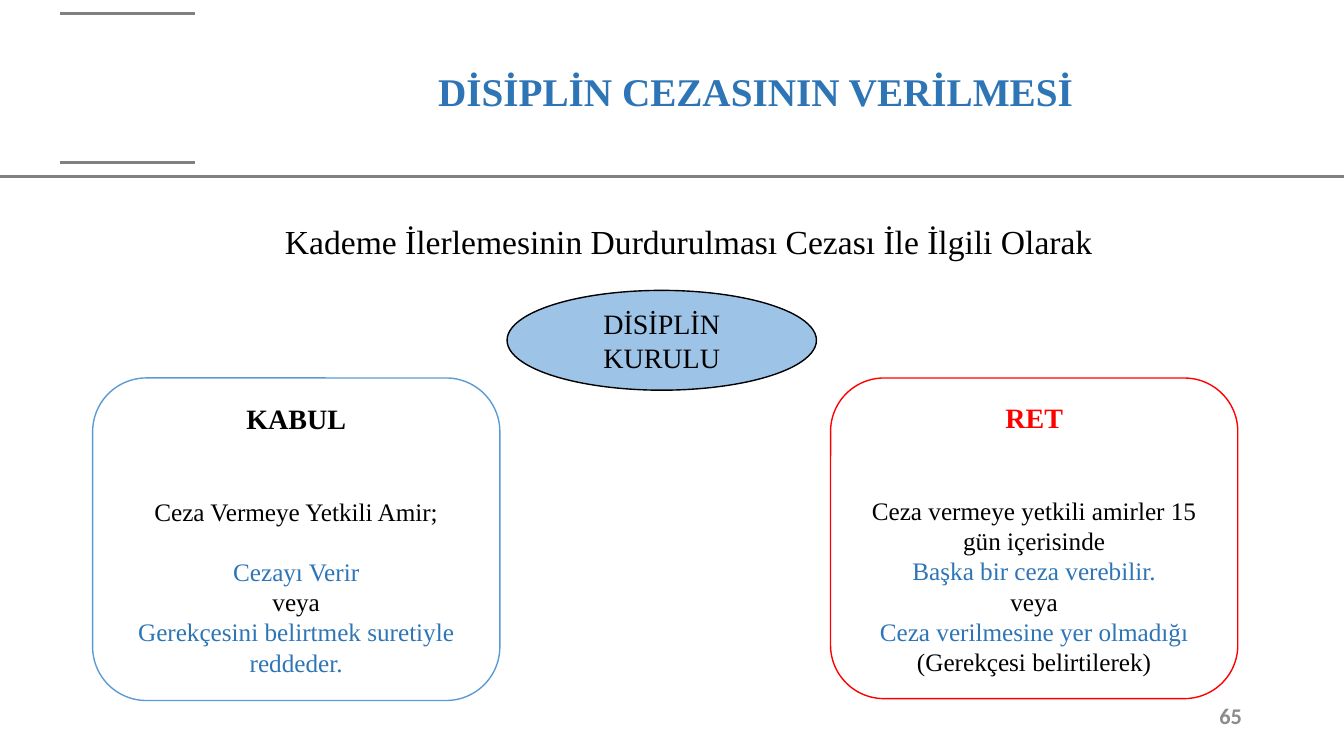
from pptx import Presentation
from pptx.dml.color import RGBColor
from pptx.enum.shapes import MSO_CONNECTOR, MSO_SHAPE
from pptx.enum.text import MSO_ANCHOR, MSO_AUTO_SIZE, PP_ALIGN
from pptx.util import Pt
from lxml.etree import SubElement
from pptx.oxml.ns import qn

BLACK = RGBColor(0, 0, 0)
WHITE = RGBColor(255, 255, 255)
RED = RGBColor(255, 0, 0)
GRAY = RGBColor(0x80, 0x80, 0x80)
PALE = RGBColor(0x8C, 0x8C, 0x8C)
BLUE = RGBColor(0x2E, 0x75, 0xB6)
SKY = RGBColor(0x5B, 0x9B, 0xD5)
LIGHT = RGBColor(0x9D, 0xC3, 0xE6)
SERIF = "Times New Roman"


def style(para, size, color, bold=False, name=SERIF, align=PP_ALIGN.CENTER):
    para.alignment = align
    font = para.font
    font.name, font.size, font.bold = name, Pt(size), bold
    font.color.rgb = color


def add_node(kind, left, top, width, height, fill, line):
    """Add a filled, outlined shape and return its text frame."""
    node = slide.shapes.add_shape(kind, Pt(left), Pt(top), Pt(width), Pt(height))
    node.shadow.inherit = False
    node.fill.solid()
    node.fill.fore_color.rgb = fill
    node.line.color.rgb = line
    node.line.width = Pt(1)
    frame = node.text_frame
    frame.word_wrap = True
    frame.vertical_anchor = MSO_ANCHOR.MIDDLE
    return frame


deck = Presentation()
deck.slide_width, deck.slide_height = Pt(960), Pt(540)
slide = deck.slides.add_slide(deck.slide_layouts[5])

# Header rules
for left, right, y in [(0, 960, 126), (43.2, 139, 9.4), (43.2, 139, 115.9)]:
    rule = slide.shapes.add_connector(
        MSO_CONNECTOR.STRAIGHT, Pt(left), Pt(y), Pt(right), Pt(y))
    rule.line.color.rgb = GRAY
    rule.line.width = Pt(2.25)
    SubElement(rule._element.spPr, qn("a:effectLst"))

# Title
title = slide.shapes.title
title.left, title.top, title.width, title.height = Pt(185), Pt(28.8), Pt(709.2), Pt(76.3)
title.text = "DİSİPLİN CEZASININ VERİLMESİ"
title.text_frame.auto_size = MSO_AUTO_SIZE.NONE
title.text_frame.vertical_anchor = MSO_ANCHOR.MIDDLE
style(title.text_frame.paragraphs[0], 28, BLUE, True)
title.text_frame.paragraphs[0].line_spacing = 0.9

# Subtitle
lead = slide.shapes.add_textbox(Pt(36.7), Pt(154.1), Pt(910.8), Pt(36)).text_frame
lead.word_wrap = True
lead.text = "Kademe İlerlemesinin Durdurulması Cezası İle İlgili Olarak"
style(lead.paragraphs[0], 24, BLACK)

# Outcome cards: each line is its space before and its coloured runs
cards = [
    (66.2, 230.4, SKY, "KABUL", BLACK, [
        (44, [("Ceza Vermeye Yetkili Amir;", BLACK)]),
        (21, [("Cezayı Verir", BLUE)]),
        (0, [("veya", BLACK)]),
        (0, [("Gerekçesini belirtmek suretiyle reddeder.", BLUE)]),
    ]),
    (593.3, 229, RED, "RET", RED, [
        (44, [("Ceza vermeye yetkili amirler 15 gün içerisinde", BLACK)]),
        (0, [("Başka bir ceza verebilir.", BLUE)]),
        (0, [("veya", BLACK)]),
        (0, [("Ceza verilmesine yer olmadığı ", BLUE),
             ("(Gerekçesi belirtilerek)", BLACK)]),
    ]),
]
for left, height, edge, head, tint, lines in cards:
    frame = add_node(MSO_SHAPE.ROUNDED_RECTANGLE, left, 270, 290.9, height, WHITE, edge)
    frame.text = head
    style(frame.paragraphs[0], 20, tint, True)
    for gap, runs in lines:
        para = frame.add_paragraph()
        style(para, 18, BLACK)
        para.space_before = Pt(gap)
        for text, color in runs:
            run = para.add_run()
            run.text = text
            run.font.color.rgb = color

# Board
board = add_node(MSO_SHAPE.OVAL, 362.2, 207.4, 221, 71.3, LIGHT, BLACK)
board.text = "DİSİPLİN KURULU"
style(board.paragraphs[0], 20, BLACK)

# Page number
page = slide.shapes.add_textbox(Pt(838.8), Pt(496.8), Pt(55.4), Pt(28.8)).text_frame
page.word_wrap = True
page.vertical_anchor = MSO_ANCHOR.MIDDLE
page.text = "65"
style(page.paragraphs[0], 16, PALE, True, "Calibri", PP_ALIGN.RIGHT)

deck.save("out.pptx")
